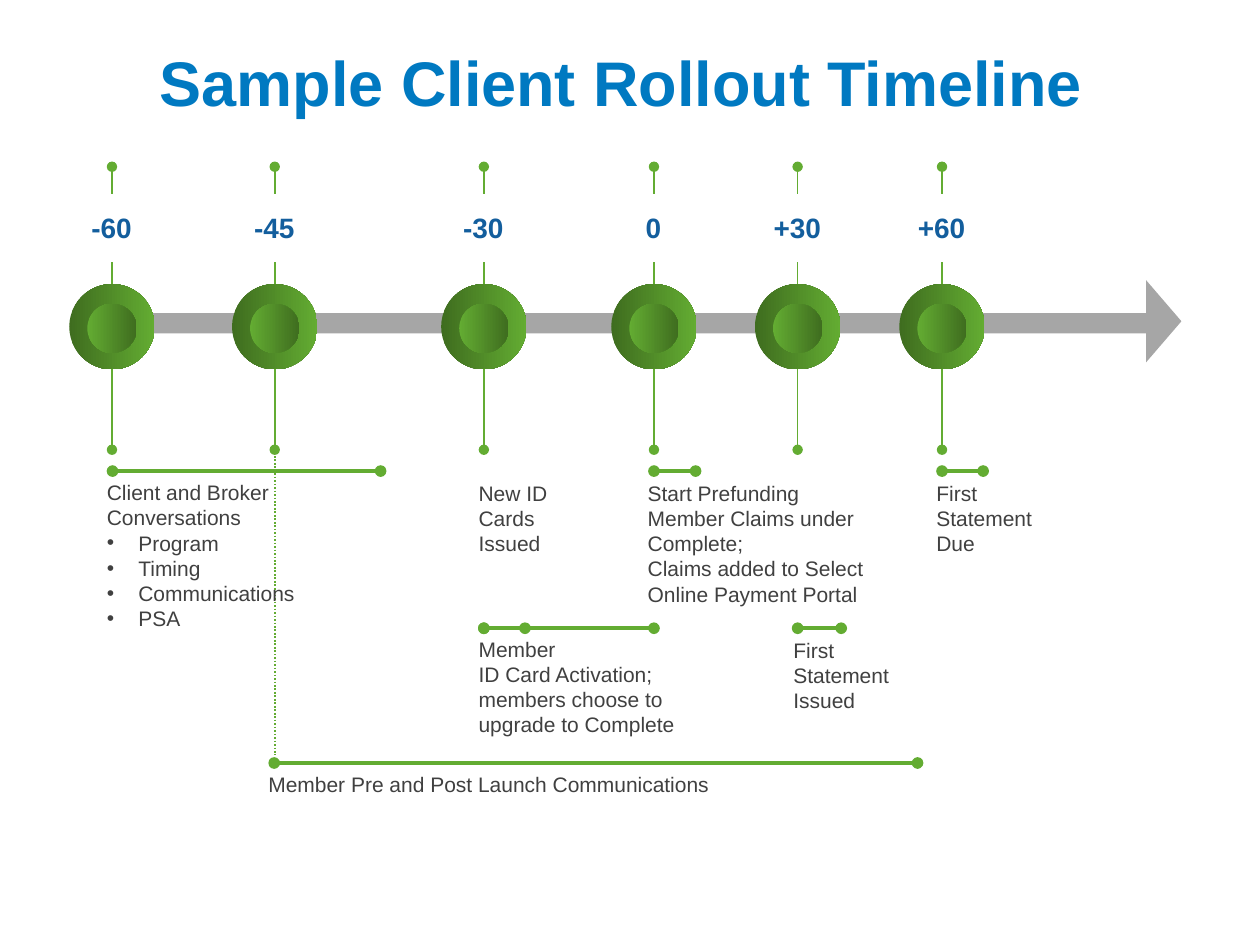
from lxml import etree
from pptx import Presentation
from pptx import util as u
from pptx.dml.color import RGBColor
from pptx.enum import dml, shapes, text
from pptx.oxml.ns import qn

Pt = u.Pt
GREEN, DARK_GREEN, GREY, WHITE = "63AC32", "3F6D1F", "A6A6A6", "FFFFFF"
TITLE_BLUE, LABEL_BLUE, TEXT_GREY = "0079C1", "135E9D", "404040"


def color(value):
    return RGBColor.from_string(value)


def add_text(left, top, width, height, lines, size, ink, bold=False, align=None, wrap=True):
    """Add a text box; a line that starts with a bullet sign becomes a list item."""
    box = page.shapes.add_textbox(Pt(left), Pt(top), Pt(width), Pt(height))
    frame = box.text_frame
    frame.word_wrap = wrap
    frame.auto_size = text.MSO_AUTO_SIZE.SHAPE_TO_FIT_TEXT
    for index, line in enumerate(lines):
        para = frame.paragraphs[0] if index == 0 else frame.add_paragraph()
        para.alignment = align
        if line.startswith("•"):
            props = para._p.get_or_add_pPr()
            props.set("marL", str(Pt(18)))
            props.set("indent", str(-Pt(18)))
            etree.SubElement(props, qn("a:buFont")).set("typeface", "Arial")
            etree.SubElement(props, qn("a:buChar")).set("char", "•")
        span = para.add_run()
        span.text = line.lstrip("•")
        span.font.name = "Arial"
        span.font.size = Pt(size)
        span.font.bold = bold
        span.font.color.rgb = color(ink)
    return box


deck = Presentation()
deck.slide_width, deck.slide_height = Pt(720), Pt(540)
page = deck.slides.add_slide(deck.slide_layouts[6])

# Milestones: centre x and day label
milestones = [(64, "-60"), (157, "-45"), (276.5, "-30"),
              (373.7, "0"), (455.8, "+30"), (538.3, "+60")]

# Stems, duration bars and the dotted guide: x1, y1, x2, y2, weight, round ends
lines = [(x, 95.3, x, 257, 1, True) for x, _ in milestones]
bars = [(64.3, 217.5, 269.2), (276.5, 300, 359), (373.7, 397.5, 269.2),
        (538.3, 561.8, 269.2), (276.5, 373.7, 359), (455.8, 480.7, 359),
        (156.7, 524.3, 436)]
lines += [(start, y, end, y, 2.25, True) for start, end, y in bars]
lines.append((157, 258.5, 157, 431.3, 1, False))
for x1, y1, x2, y2, weight, round_ends in lines:
    line = page.shapes.add_connector(shapes.MSO_CONNECTOR.STRAIGHT,
                                     Pt(x1), Pt(y1), Pt(x2), Pt(y2))
    line.line.color.rgb = color(GREEN)
    line.line.width = Pt(weight)
    if round_ends:
        for end in ("a:headEnd", "a:tailEnd"):
            etree.SubElement(line.line._get_or_add_ln(), qn(end)).set("type", "oval")
    else:
        line.line.dash_style = dml.MSO_LINE.ROUND_DOT
    etree.SubElement(line._element.spPr, qn("a:effectLst"))

# Shapes: kind, left, top, width, height, rotation, fill (two colours make a gradient)
kinds = shapes.MSO_SHAPE
parts = [(kinds.ISOSCELES_TRIANGLE, 641.5, 173.5, 47, 20.2, 90, [GREY]),
         (kinds.ROUNDED_RECTANGLE, 64, 179, 597.6, 11.5, 0, [GREY])]
for x, _ in milestones:
    parts += [(kinds.OVAL, x - 24.4, 162.3, 48.8, 48.8, 0, [DARK_GREEN, GREEN]),
              (kinds.OVAL, x - 14.1, 173.5, 28.2, 28.2, 0, [GREEN, DARK_GREEN]),
              (kinds.OVAL, x - 19.4, 110.9, 38.8, 38.8, 0, [WHITE])]
for kind, left, top, width, height, turn, tones in parts:
    shape = page.shapes.add_shape(kind, Pt(left), Pt(top), Pt(width), Pt(height))
    shape.rotation = turn
    shape.shadow.inherit = False
    shape.line.fill.background()
    if len(tones) == 1:
        shape.fill.solid()
        shape.fill.fore_color.rgb = color(tones[0])
    else:
        shape.fill.gradient()
        shape.fill.gradient_angle = 0
        for stop, tone in zip(shape.fill.gradient_stops, tones):
            stop.color.rgb = color(tone)

# Day labels
for x, label in milestones:
    add_text(x - 21, 116.9, 41.5, 26.7, [label], 16, LABEL_BLUE, True, text.PP_ALIGN.CENTER)

# Title
title = add_text(0, 22.3, 720, 54, ["Sample Client Rollout Timeline "], 36,
                 TITLE_BLUE, True, text.PP_ALIGN.CENTER)
title.text_frame.auto_size = text.MSO_AUTO_SIZE.NONE
title.text_frame.vertical_anchor = text.MSO_ANCHOR.MIDDLE
title.text_frame.paragraphs[0].line_spacing = 0.9

# Activity notes: left, top, width, height, wrap, lines
notes = [
    (54, 270.6, 129.6, 94.5, True,
     ["Client and Broker Conversations", "•Program", "•Timing", "•Communications", "•PSA"]),
    (266.4, 270.9, 73.4, 51, True, ["New ID Cards Issued"]),
    (363, 270.9, 150.5, 80, True,
     ["Start Prefunding", "Member Claims under Complete;",
      "Claims added to Select Online Payment Portal"]),
    (528, 270.9, 69.8, 51, False, ["First", "Statement", "Due"]),
    (266.4, 360, 134, 65.5, True,
     ["Member", "ID Card Activation; members choose to upgrade to Complete"]),
    (446.3, 360.7, 95, 36, True, ["First Statement Issued"]),
    (146.3, 437.2, 368, 21.8, True, ["Member Pre and Post Launch Communications"]),
]
# The issued-statement note breaks after each word
notes[5] = (446.3, 360.7, 72, 51, True, ["First Statement Issued"])
for left, top, width, height, wrap, words in notes:
    add_text(left, top, width, height, words, 12, TEXT_GREY, wrap=wrap)

deck.save("out.pptx")
